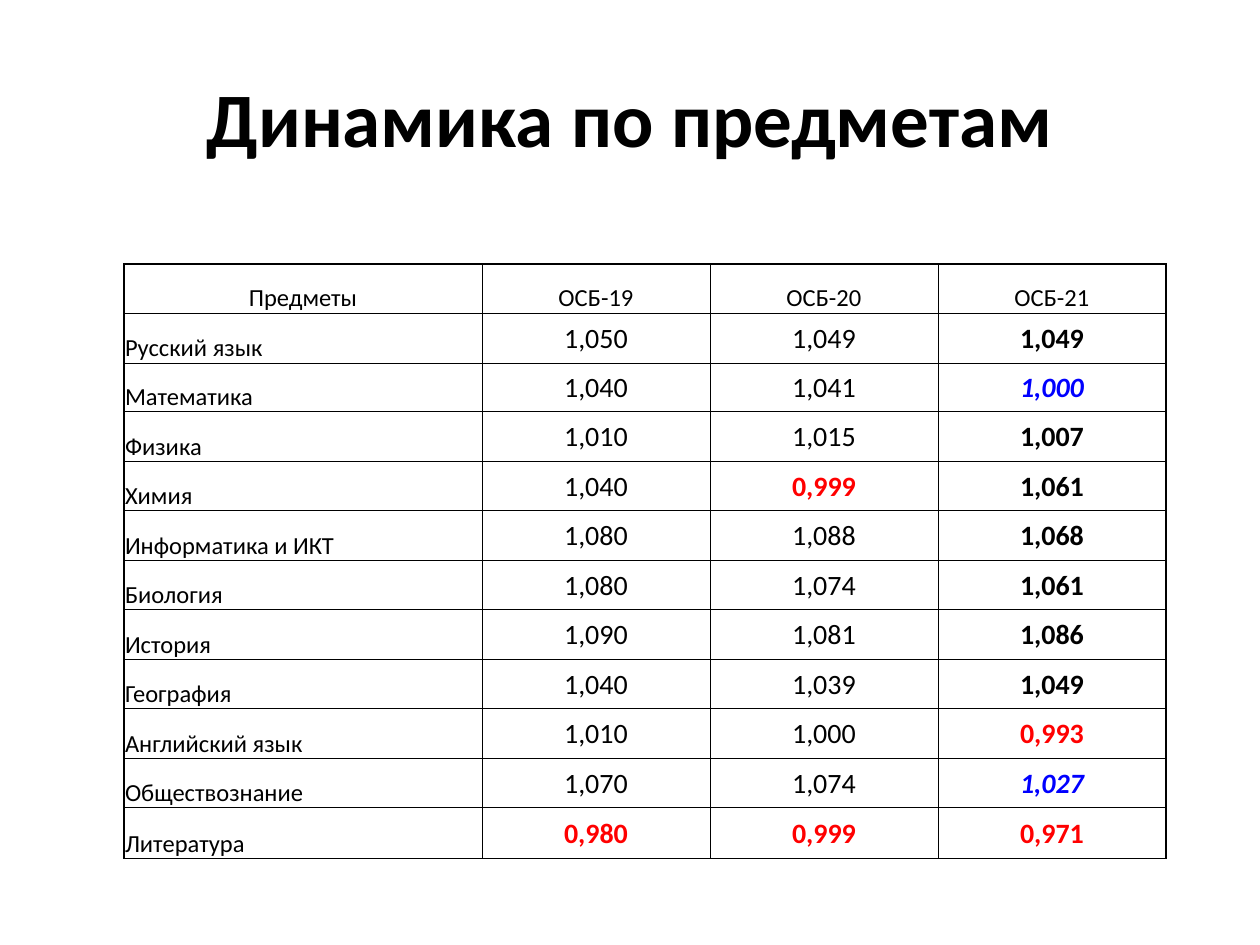
from dataclasses import dataclass

from lxml.etree import SubElement
from pptx import Presentation
from pptx.dml.color import RGBColor
from pptx.enum.text import MSO_ANCHOR as Anchor, PP_ALIGN as Align
from pptx.oxml.ns import qn
from pptx.util import Emu, Pt

SCALE = 914400 / 126


def px(length):
    return Emu(round(length * SCALE))


@dataclass(frozen=True)
class Theme:
    font: str = "Calibri"
    ink: str = "000000"
    low: str = "FF0000"
    drop: str = "0000FF"
    title_size: int = 44
    label_size: int = 14
    value_size: int = 16
    outer_line: float = 1
    inner_line: float = 0.5


class SlideMaker:
    def __init__(self, page, theme):
        self.page = page
        self.theme = theme

    def add_text(self, frame, text, size, align, color=None, bold=False, italic=False):
        para = frame.paragraphs[0]
        para.alignment = align
        span = para.add_run()
        span.text = text
        formats = {"name": self.theme.font, "size": Pt(size), "bold": bold, "italic": italic}
        for name, value in formats.items():
            setattr(span.font, name, value)
        span.font.color.rgb = RGBColor.from_string(color or self.theme.ink)

    def title(self, text, left, top, width, height):
        box = self.page.shapes.title
        places = {"left": left, "top": top, "width": width, "height": height}
        for name, value in places.items():
            setattr(box, name, px(value))
        box.text_frame.vertical_anchor = Anchor.MIDDLE
        self.add_text(box.text_frame, text, self.theme.title_size, Align.CENTER, bold=True)

    def table(self, left, top, widths, heights):
        frame = self.page.shapes.add_table(
            len(heights), len(widths), px(left), px(top), px(sum(widths)), px(sum(heights)))
        table = frame.table
        table.first_row = table.horz_banding = False
        for column, width in zip(table.columns, widths):
            column.width = px(width)
        for row, height in zip(table.rows, heights):
            row.height = px(height)
        last_row, last_column = len(heights) - 1, len(widths) - 1
        for i, row in enumerate(table.rows):
            for j, cell in enumerate(row.cells):
                self.borders(cell, {"lnL": j == 0, "lnR": j == last_column,
                                    "lnT": i == 0, "lnB": i == last_row})
                cell.fill.background()
        return table

    def borders(self, cell, sides):
        properties = cell._tc.get_or_add_tcPr()
        for side, outer in sides.items():
            weight = self.theme.outer_line if outer else self.theme.inner_line
            line = SubElement(properties, qn(f"a:{side}"), w=str(Pt(weight)))
            fill = SubElement(line, qn("a:solidFill"))
            SubElement(fill, qn("a:srgbClr"), val=self.theme.ink)

    def cell(self, cell, text, size, align, anchor, **style):
        formats = {"margin_left": px(1), "margin_right": px(1), "margin_top": px(1),
                   "margin_bottom": px(0), "vertical_anchor": anchor}
        for name, value in formats.items():
            setattr(cell, name, value)
        self.add_text(cell.text_frame, text, size, align, **style)

    def label(self, cell, text, align):
        self.cell(cell, text, self.theme.label_size, align, Anchor.BOTTOM)

    def score(self, cell, value, previous, latest):
        low = value < 1
        drop = latest and not low and previous - value > 0.04
        color = self.theme.low if low else self.theme.drop if drop else self.theme.ink
        self.cell(cell, f"{value:.3f}".replace(".", ","), self.theme.value_size,
                  Align.CENTER, Anchor.MIDDLE, color=color, bold=low or latest, italic=drop)


HEADINGS = ["Предметы", "ОСБ-19", "ОСБ-20", "ОСБ-21"]
SCORES = {
    "Русский язык": (1.050, 1.049, 1.049),
    "Математика": (1.040, 1.041, 1.000),
    "Физика": (1.010, 1.015, 1.007),
    "Химия": (1.040, 0.999, 1.061),
    "Информатика и ИКТ": (1.080, 1.088, 1.068),
    "Биология": (1.080, 1.074, 1.061),
    "История": (1.090, 1.081, 1.086),
    "География": (1.040, 1.039, 1.049),
    "Английский язык": (1.010, 1.000, 0.993),
    "Обществознание": (1.070, 1.074, 1.027),
    "Литература": (0.980, 0.999, 0.971),
}


def main():
    deck = Presentation()
    deck.slide_width, deck.slide_height = px(1260), px(945)
    maker = SlideMaker(deck.slides.add_slide(deck.slide_layouts[5]), Theme())
    maker.title("Динамика по предметам", 63, 38, 1134, 157)

    count = len(SCORES)
    edges = [round(544 * i / count) for i in range(count + 1)]
    heights = [bottom - top for top, bottom in zip(edges, edges[1:])] + [51]
    table = maker.table(124, 264, [358, 228, 228, 228], heights)
    for j, heading in enumerate(HEADINGS):
        maker.label(table.cell(0, j), heading, Align.CENTER)
    for i, (subject, values) in enumerate(SCORES.items(), 1):
        maker.label(table.cell(i, 0), subject, Align.LEFT)
        for j, value in enumerate(values, 1):
            previous = values[max(j - 2, 0)]
            maker.score(table.cell(i, j), value, previous, j == len(values))
    deck.save("out.pptx")


if __name__ == "__main__":
    main()
